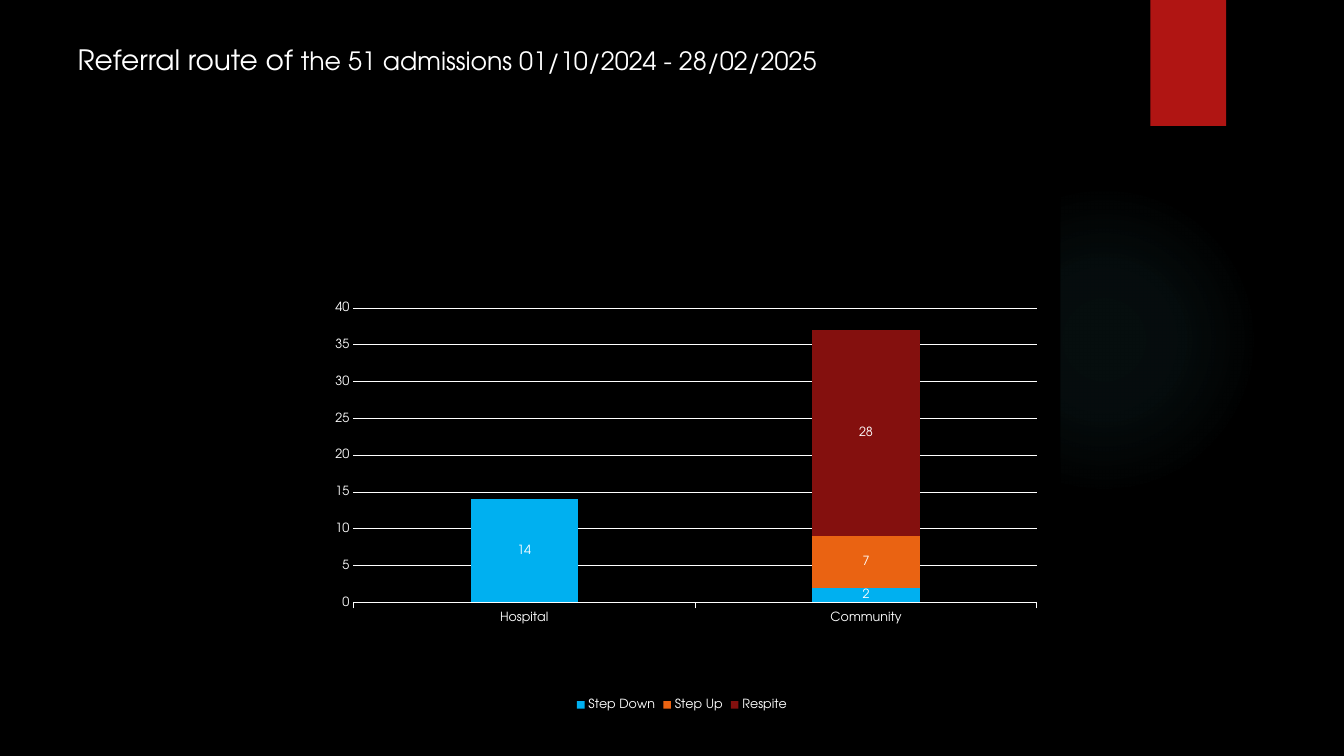
from lxml import etree
from pptx import Presentation
from pptx.chart.data import CategoryChartData
from pptx.dml.color import RGBColor
from pptx.enum.chart import XL_CHART_TYPE, XL_LABEL_POSITION, XL_LEGEND_POSITION, XL_TICK_MARK
from pptx.enum.shapes import MSO_SHAPE
from pptx.enum.text import MSO_ANCHOR, MSO_AUTO_SIZE, PP_ALIGN
from pptx.oxml import parse_xml
from pptx.oxml.ns import nsdecls, qn
from pptx.util import Pt

FONT = "TeX Gyre Adventor"
BLACK = RGBColor(0x00, 0x00, 0x00)
WHITE = RGBColor(0xFF, 0xFF, 0xFF)
RED = RGBColor(0xB0, 0x15, 0x13)
BLUE = RGBColor(0x00, 0xB0, 0xF0)
ORANGE = RGBColor(0xEA, 0x63, 0x12)
DARK_RED = RGBColor(0x84, 0x10, 0x0E)
TEAL = RGBColor(0x50, 0xB9, 0xC1)

# Content
TITLE = [("Referral route of ", 20), ("the 51 admissions 01/10/2024 - 28/02/2025", 18)]
ROUTES = ["Hospital", "Community"]
SERIES = [
    ("Step Down", [14, 2], BLUE),
    ("Step Up", [None, 7], ORANGE),
    ("Respite", [None, 28], DARK_RED),
]
GLOW_STOPS = [(0, 7), (36, 6), (69, 0)]  # position %, opacity %
PLOT = {"x": 0.066, "y": 0.26, "w": 0.903, "h": 0.536}  # share of chart


def set_font(font, size):
    font.name = FONT
    font.size = Pt(size)
    font.color.rgb = WHITE


def add_plain_shape(slide, kind, left, top, width, height):
    sp = slide.shapes.add_shape(kind, Pt(left), Pt(top), Pt(width), Pt(height))
    sp.shadow.inherit = False
    sp.line.fill.background()
    return sp


def add_glow(slide):
    glow = add_plain_shape(slide, MSO_SHAPE.OVAL, 677.5, 131.75, 221.75, 221.75)
    stops = "".join(
        f'<a:gs pos="{pos * 1000}"><a:srgbClr val="{TEAL}">'
        f'<a:alpha val="{alpha * 1000}"/></a:srgbClr></a:gs>'
        for pos, alpha in GLOW_STOPS)
    grad = parse_xml(
        f'<a:gradFill {nsdecls("a")}><a:gsLst>{stops}</a:gsLst><a:path path="circle">'
        '<a:fillToRect l="50000" t="50000" r="50000" b="50000"/></a:path></a:gradFill>')
    glow.element.spPr.find(qn("a:prstGeom")).addnext(grad)


def add_title(slide):
    title = slide.shapes.title
    title.left, title.top, title.width, title.height = Pt(48.25), Pt(26.6), Pt(643), Pt(31.5)
    tf = title.text_frame
    tf.word_wrap = True
    tf.auto_size = MSO_AUTO_SIZE.SHAPE_TO_FIT_TEXT
    tf.vertical_anchor = MSO_ANCHOR.TOP
    p = tf.paragraphs[0]
    p.alignment = PP_ALIGN.LEFT
    for text, size in TITLE:
        r = p.add_run()
        r.text = text
        set_font(r.font, size)


def add_referral_chart(slide):
    data = CategoryChartData()
    data.categories = ROUTES
    for name, values, _ in SERIES:
        data.add_series(name, values)
    chart = slide.shapes.add_chart(XL_CHART_TYPE.COLUMN_STACKED, Pt(216.75), Pt(118),
                                   Pt(540.75), Pt(392.5), data).chart
    chart.has_title = False
    set_font(chart.font, 10)

    # Columns and value labels
    plot = chart.plots[0]
    plot.gap_width, plot.overlap = 219, 100
    plot.vary_by_categories = False
    for series, (_, _, color) in zip(plot.series, SERIES):
        series.format.fill.solid()
        series.format.fill.fore_color.rgb = color
        labels = series.data_labels
        labels.show_value = True
        labels.position = XL_LABEL_POSITION.CENTER
        set_font(labels.font, 9)

    # Axes and legend
    cat_axis, val_axis = chart.category_axis, chart.value_axis
    cat_axis.major_tick_mark = XL_TICK_MARK.OUTSIDE
    val_axis.major_tick_mark = XL_TICK_MARK.NONE
    val_axis.minimum_scale, val_axis.maximum_scale, val_axis.major_unit = 0, 40, 5
    val_axis.format.line.fill.background()
    for line in (cat_axis.format.line, val_axis.major_gridlines.format.line):
        line.color.rgb = WHITE
        line.width = Pt(0.75)
    chart.has_legend = True
    chart.legend.position = XL_LEGEND_POSITION.BOTTOM
    chart.legend.include_in_layout = False
    for part in (cat_axis.tick_labels, val_axis.tick_labels, chart.legend):
        set_font(part.font, 9)

    # Plot area position
    plot_area = chart.element.find(".//" + qn("c:plotArea"))
    for old in plot_area.findall(qn("c:layout")):
        plot_area.remove(old)
    layout = etree.Element(qn("c:layout"))
    manual = etree.SubElement(layout, qn("c:manualLayout"))
    settings = {"layoutTarget": "inner", "xMode": "edge", "yMode": "edge", **PLOT}
    for tag, value in settings.items():
        etree.SubElement(manual, qn(f"c:{tag}")).set("val", str(value))
    plot_area.insert(0, layout)

    # Chart background
    chart.element.find(qn("c:chart")).addnext(parse_xml(
        f'<c:spPr {nsdecls("c", "a")}><a:solidFill><a:srgbClr val="{BLACK}"/></a:solidFill>'
        '<a:ln><a:noFill/></a:ln></c:spPr>'))


def main():
    prs = Presentation()
    prs.slide_width, prs.slide_height = Pt(960), Pt(540)
    slide = prs.slides.add_slide(prs.slide_layouts[5])
    slide.background.fill.solid()
    slide.background.fill.fore_color.rgb = BLACK

    add_glow(slide)
    tab = add_plain_shape(slide, MSO_SHAPE.RECTANGLE, 821.75, 0, 54, 90)
    tab.fill.solid()
    tab.fill.fore_color.rgb = RED
    add_referral_chart(slide)
    add_title(slide)
    prs.save("out.pptx")


if __name__ == "__main__":
    main()
